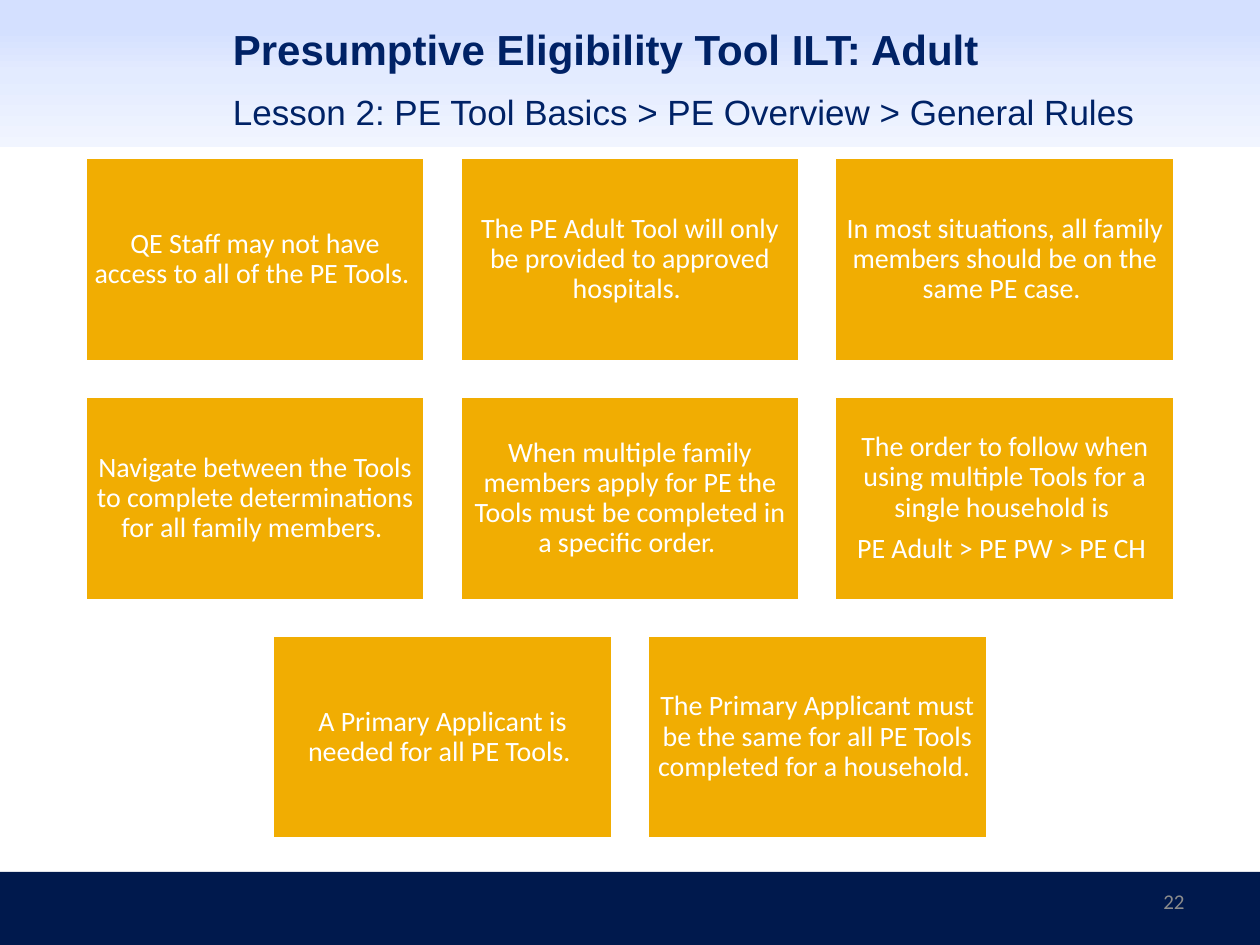
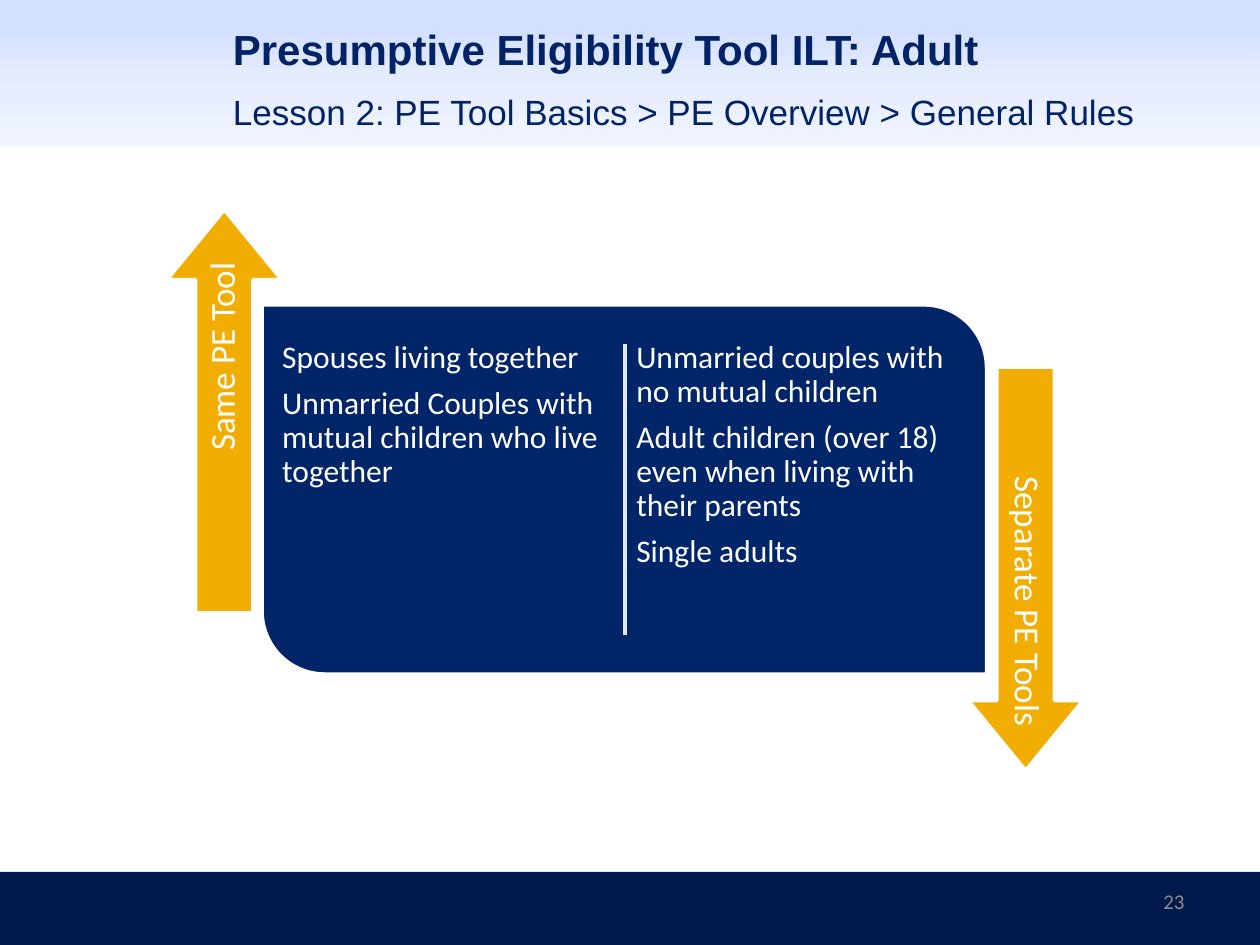
from dataclasses import dataclass

import lxml.etree
import pptx
import pptx.dml.color
import pptx.enum.shapes
import pptx.enum.text
import pptx.oxml.ns
import pptx.util

Align = pptx.enum.text.PP_ALIGN
Anchor = pptx.enum.text.MSO_ANCHOR
Kind = pptx.enum.shapes.MSO_SHAPE
qn = pptx.oxml.ns.qn

WIDE = pptx.util.Inches(10)
HIGH = pptx.util.Inches(7.5)
COLS, ROWS = 100, 75


@dataclass(frozen=True)
class Theme:
    white: str = "FFFFFF"
    gold: str = "F1AD02"
    navy: str = "002569"
    ink: str = "002266"
    base: str = "00194D"
    gray: str = "8C8C8C"
    rule: str = "DFE8FF"
    fade: tuple = ((20, "D4E0FF"), (50, "E3EBFF"), (100, "F1F5FF"))
    head: str = "Arial"
    body: str = "Calibri"
    title: int = 24
    lesson: int = 20
    arrow: int = 20
    panel: int = 18
    card: int = 16
    folio: int = 12
    edge: int = 2


@dataclass(frozen=True)
class Box:
    left: float
    top: float
    width: float
    height: float


@dataclass(frozen=True)
class Style:
    font: str
    size: int
    color: str
    bold: bool = False
    align: Align = Align.LEFT
    anchor: Anchor = Anchor.TOP
    pad: tuple = (1, 0.5)
    lead: float = 1
    gap: float = 0


@dataclass(frozen=True)
class Arrow:
    shape: Box
    label: Box
    turn: int
    text: str


T = Theme()
TITLE = Style(T.head, T.title, T.ink, bold=True, anchor=Anchor.MIDDLE)
LESSON = Style(T.head, T.lesson, T.ink)
FOLIO = Style(T.body, T.folio, T.gray, align=Align.RIGHT, anchor=Anchor.MIDDLE)
CARD = Style(T.body, T.card, T.white, align=Align.CENTER,
             anchor=Anchor.MIDDLE, pad=(0.7, 0.7), lead=0.9, gap=0.38)
PANEL = Style(T.body, T.panel, T.white, pad=(0.7, 0.7), lead=0.9, gap=0.38)
LABEL = Style(T.body, T.arrow, T.white, align=Align.RIGHT,
              anchor=Anchor.MIDDLE, pad=(0.8, 0.8), lead=0.9)

CARDS = (
    (
        ("QE Staff may not have access to all of the PE Tools. ",),
        ("The PE Adult Tool will only be provided to approved hospitals. ",),
        ("In most situations, all family members should be on the same PE case. ",),
    ),
    (
        ("Navigate between the Tools to complete determinations for all family members. ",),
        ("When multiple family members apply for PE the Tools must be completed in a specific order. ",),
        ("The order to follow when using multiple Tools for a single household is ",
         "PE Adult > PE PW > PE CH "),
    ),
    (
        ("A Primary Applicant is needed for all PE Tools. ",),
        ("The Primary Applicant must be the same for all PE Tools completed for a household. ",),
    ),
)
CARD_WIDE, CARD_HIGH, CARD_GAP, CARD_TOP = 27, 16.2, 2.75, 12.5

LISTS = (
    (Box(21.7, 26.4, 28.6, 24.9),
     ("Spouses living together",
      "Unmarried Couples with mutual children who live together")),
    (Box(49.8, 26.4, 26.9, 24.9),
     ("Unmarried couples with no mutual children",
      "Adult children (over 18) even when living with their parents",
      "Single adults")),
)
ARROWS = (
    Arrow(Box(1.8, 28.1, 32, 9.1), Box(3.1, 31.8, 29.3, 4.5), 270, "Same PE Tool "),
    Arrow(Box(65.4, 40.6, 32, 9.1), Box(66.8, 41.5, 29.3, 4.5), 90, "Separate PE Tools"),
)


def across(cols: float) -> int:
    return round(WIDE * cols / COLS)


def down(rows: float) -> int:
    return round(HIGH * rows / ROWS)


def place(box: Box) -> tuple:
    return across(box.left), down(box.top), across(box.width), down(box.height)


def tint(code: str) -> pptx.dml.color.RGBColor:
    return pptx.dml.color.RGBColor.from_string(code)


def write(shape, lines: tuple, style: Style) -> None:
    frame = shape.text_frame
    frame.word_wrap = True
    frame.vertical_anchor = style.anchor
    side, end = style.pad
    frame.margin_left = frame.margin_right = across(side)
    frame.margin_top = frame.margin_bottom = down(end)
    for spot, line in enumerate(lines):
        para = frame.add_paragraph() if spot else frame.paragraphs[0]
        para.alignment = style.align
        para.line_spacing = style.lead
        para.space_after = pptx.util.Pt(style.gap * style.size)
        run = para.add_run()
        run.text = line
        run.font.name = style.font
        run.font.size = pptx.util.Pt(style.size)
        run.font.bold = style.bold
        run.font.color.rgb = tint(style.color)


def note(slide, box: Box, lines: tuple, style: Style, turn: int = 0) -> None:
    shape = slide.shapes.add_textbox(*place(box))
    shape.rotation = turn
    write(shape, lines, style)


def block(slide, kind: Kind, box: Box, fill: str, edge: bool = True,
          bends: tuple = (), turn: int = 0):
    shape = slide.shapes.add_shape(kind, *place(box))
    shape.shadow.inherit = False
    shape.rotation = turn
    shape.fill.solid()
    shape.fill.fore_color.rgb = tint(fill)
    if edge:
        shape.line.color.rgb = tint(T.white)
        shape.line.width = pptx.util.Pt(T.edge)
    else:
        shape.line.fill.background()
    for spot, bend in enumerate(bends):
        shape.adjustments[spot] = bend
    return shape


def blend(shape, stops: tuple) -> None:
    shape.fill.gradient()
    shape.fill.gradient_angle = 270
    ramp = next(shape._element.iter(qn("a:gsLst")))
    ramp.clear()
    for share, code in stops:
        stop = lxml.etree.SubElement(ramp, qn("a:gs"), pos=str(share * 1000))
        lxml.etree.SubElement(stop, qn("a:srgbClr"), val=code)


def split(slide, col: float, top: float, end: float) -> None:
    line = slide.shapes.add_connector(
        pptx.enum.shapes.MSO_CONNECTOR.STRAIGHT,
        across(col), down(top), across(col), down(end))
    line.line.color.rgb = tint(T.rule)
    line.line.width = pptx.util.Pt(T.edge)
    lxml.etree.SubElement(line._element.spPr, qn("a:effectLst"))


def start(deck, page: int):
    slide = deck.slides.add_slide(deck.slide_layouts[6])
    block(slide, Kind.RECTANGLE, Box(0, 69.2, COLS, 5.8), T.base, edge=False)
    band = block(slide, Kind.RECTANGLE, Box(0, 0, COLS, 11.7), T.white, edge=False)
    blend(band, T.fade)
    note(slide, Box(17.5, 0.8, 77.5, 6.2),
         ("Presumptive Eligibility Tool ILT: Adult",), TITLE)
    note(slide, Box(17.5, 6.7, 77.5, 5),
         ("Lesson 2: PE Tool Basics > PE Overview > General Rules",), LESSON)
    note(slide, Box(71.7, 69.5, 23.3, 4), (str(page),), FOLIO)
    return slide


def rules(deck) -> None:
    slide = start(deck, 22)
    for row, group in enumerate(CARDS):
        span = len(group) * (CARD_WIDE + CARD_GAP) - CARD_GAP
        left = (COLS - span) / 2
        top = CARD_TOP + row * (CARD_HIGH + CARD_GAP)
        for col, lines in enumerate(group):
            box = Box(left + col * (CARD_WIDE + CARD_GAP), top, CARD_WIDE, CARD_HIGH)
            write(block(slide, Kind.RECTANGLE, box, T.gold), lines, CARD)


def tools(deck) -> None:
    slide = start(deck, 23)
    block(slide, Kind.ROUND_2_DIAG_RECTANGLE, Box(20.8, 24.2, 57.5, 29.3),
          T.navy, bends=(0, 0.17))
    split(slide, 49.6, 27.3, 50.4)
    for box, lines in LISTS:
        note(slide, box, lines, PANEL)
    for arrow in ARROWS:
        block(slide, Kind.RIGHT_ARROW, arrow.shape, T.gold,
              bends=(0.5, 0.61), turn=arrow.turn)
        note(slide, arrow.label, (arrow.text,), LABEL, arrow.turn)


def main() -> None:
    deck = pptx.Presentation()
    deck.slide_width, deck.slide_height = WIDE, HIGH
    rules(deck)
    tools(deck)
    deck.save("out.pptx")


if __name__ == "__main__":
    main()
